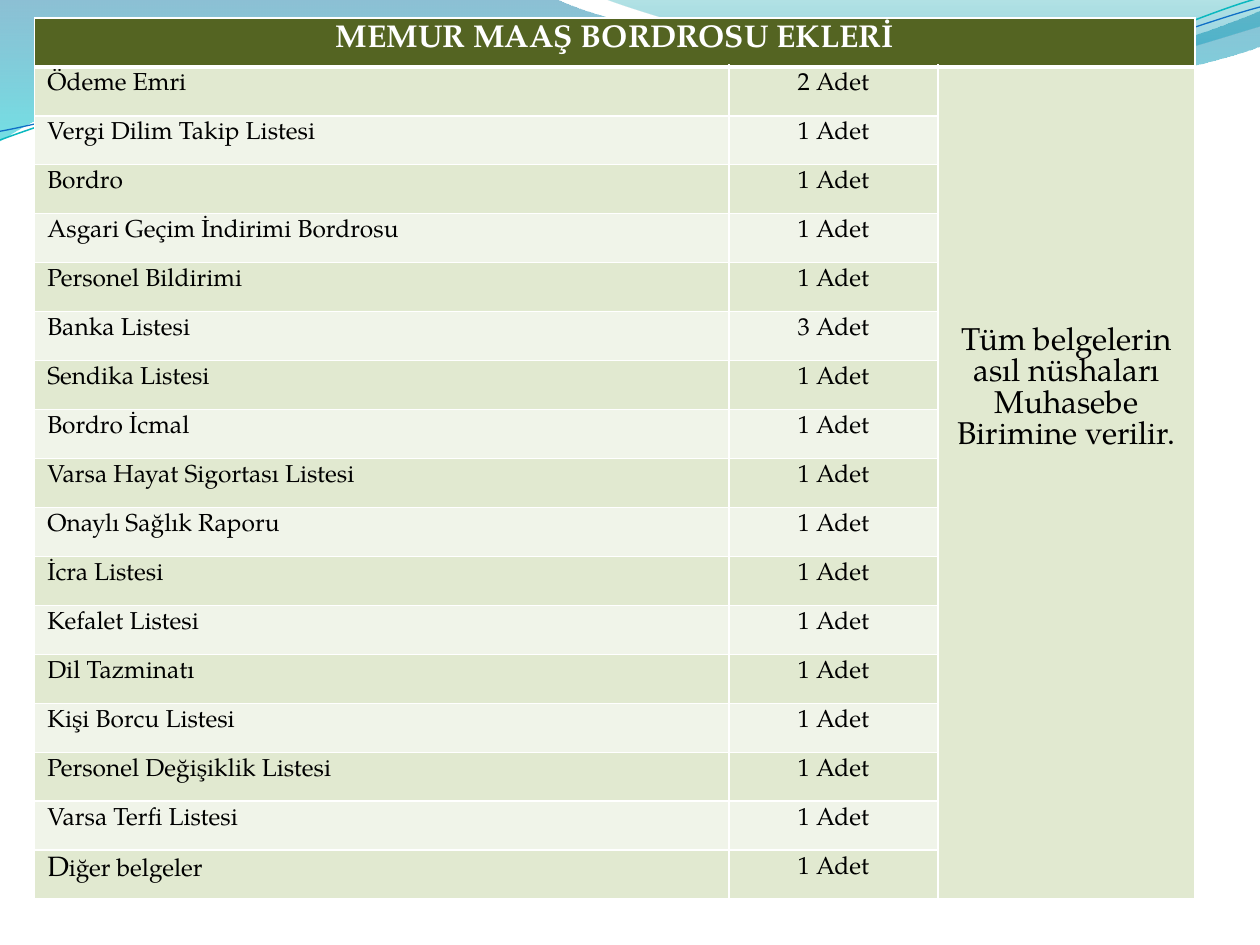
import math
from dataclasses import dataclass
from typing import Any, Optional

from lxml import etree
from pptx import Presentation
from pptx import util as u
from pptx.dml import color
from pptx.enum import text
from pptx.oxml import ns

WHITE = color.RGBColor(0xFF, 0xFF, 0xFF)
BLACK = color.RGBColor(0, 0, 0)
OLIVE = color.RGBColor(0x54, 0x64, 0x22)
BAND_DARK = color.RGBColor(0xE1, 0xE9, 0xD0)
BAND_LIGHT = color.RGBColor(0xF0, 0xF4, 0xE9)
DEEP_BLUE = color.RGBColor(0x00, 0x74, 0xA1)
CYAN = color.RGBColor(0x00, 0xC6, 0xCF)
TEAL = color.RGBColor(0x00, 0xA1, 0xA9)
SKY = color.RGBColor(0x00, 0x8B, 0xBF)
AQUA = color.RGBColor(0x0A, 0xB8, 0xBF)
BLUE = color.RGBColor(0x0F, 0x6F, 0xC6)

FONT = "TeX Gyre Pagella"
ROW_HEIGHT = 28
COLUMN_WIDTHS = (396.7, 119.5, 146.9)
TITLE = "MEMUR MAAŞ BORDROSU EKLERİ"
NOTE = "Tüm belgelerin asıl nüshaları Muhasebe Birimine verilir."
DOCUMENTS = (
    ("Ödeme Emri", 2), ("Vergi Dilim Takip Listesi", 1), ("Bordro", 1),
    ("Asgari Geçim İndirimi Bordrosu", 1), ("Personel Bildirimi", 1),
    ("Banka Listesi", 3), ("Sendika Listesi", 1), ("Bordro İcmal", 1),
    ("Varsa Hayat Sigortası Listesi", 1), ("Onaylı Sağlık Raporu", 1),
    ("İcra Listesi", 1), ("Kefalet Listesi", 1), ("Dil Tazminatı", 1),
    ("Kişi Borcu Listesi", 1), ("Personel Değişiklik Listesi", 1),
    ("Varsa Terfi Listesi", 1), ("Diğer belgeler", 1),
)

Point = tuple[float, float]


@dataclass(frozen=True)
class Stop:
    position: float
    tint: color.RGBColor
    opacity: int


@dataclass(frozen=True)
class Wave:
    start: Point
    segments: tuple[tuple[Point, ...], ...]
    stops: tuple[Stop, ...] = ()
    stroke: Optional[color.RGBColor] = None
    weight: float = 0
    pivot: Point = (0, 0)
    turn: float = 0


@dataclass(frozen=True)
class Style:
    size: float
    ink: color.RGBColor = BLACK
    bold: bool = False
    align: text.PP_ALIGN = text.PP_ALIGN.CENTER


HEADING = Style(18, WHITE, True)
ITEM = Style(14, align=text.PP_ALIGN.LEFT)
COUNT = Style(14)
REMARK = Style(18)

WAVES = (
    Wave((0, 0), (
        ((317, -1),),
        ((343, 12), (478, 45), (546, 45)),
        ((614, 45), (690, 19), (720, 6)),
        ((721, 26),),
        ((708, 32), (626, 55), (537, 54)),
        ((448, 54), (275, 20), (185, 24)),
        ((93, 26), (33, 60), (-1, 81)),
        ((0, 0),),
    ), (Stop(0, DEEP_BLUE, 45), Stop(1, CYAN, 55))),
    Wave((345, -1), (
        ((367, 8), (491, 45), (554, 47)),
        ((616, 50), (692, 23), (720, 15)),
        ((720, 0),),
        ((345, -1),),
    ), (Stop(0, TEAL, 30), Stop(0.8, SKY, 45))),
    Wave((0, 80), (
        ((35, 67), (114, 41), (199, 37)),
        ((284, 34), (427, 64), (513, 58)),
        ((600, 51), (675, 11), (719, -1)),
    ), stroke=AQUA, weight=0.85, pivot=(359.3, 41.4), turn=-2.7),
    Wave((0, 75), (
        ((34, 69), (118, 44), (204, 40)),
        ((290, 37), (430, 60), (516, 54)),
        ((602, 48), (678, 15), (720, 4)),
    ), stroke=BLUE, weight=0.75, pivot=(359.6, 42.5), turn=-2.7),
)


def apply(target: Any, values: dict[str, Any]) -> None:
    for name, value in values.items():
        setattr(target, name, value)


def outline(wave: Wave) -> list[Point]:
    points = [wave.start, *(point for segment in wave.segments for point in segment)]
    cx, cy = wave.pivot
    cos, sin = math.cos(math.radians(-wave.turn)), math.sin(math.radians(-wave.turn))
    return [(cx + (x - cx) * cos - (y - cy) * sin,
             cy + (x - cx) * sin + (y - cy) * cos) for x, y in points]


def bend_segments(shape: Any, wave: Wave) -> None:
    lines = iter(list(shape._element.iter(ns.qn("a:lnTo"))))
    for segment in wave.segments:
        group = [next(lines) for _ in segment]
        if len(group) == 3:
            curve = etree.Element(ns.qn("a:cubicBezTo"))
            group[0].addprevious(curve)
            for line in group:
                curve.append(line[0])
                line.getparent().remove(line)


def draw_wave(page: Any, wave: Wave) -> None:
    points = [(u.Pt(x), u.Pt(y)) for x, y in outline(wave)]
    builder = page.shapes.build_freeform(*points[0], scale=1.0)
    builder.add_line_segments(points[1:], close=bool(wave.stops))
    shape = builder.convert_to_shape()
    bend_segments(shape, wave)
    shape.shadow.inherit = False
    shape.rotation = wave.turn
    if not wave.stops:
        shape.fill.background()
        shape.line.color.rgb = wave.stroke
        shape.line.width = u.Pt(wave.weight)
        return
    shape.line.fill.background()
    shape.fill.gradient()
    shape.fill.gradient_angle = 270
    for target, stop in zip(shape.fill.gradient_stops, wave.stops):
        target.position = stop.position
        target.color.rgb = stop.tint
    tints = shape.fill._xPr.iter(ns.qn("a:srgbClr"))
    for tint, stop in zip(tints, wave.stops):
        etree.SubElement(tint, ns.qn("a:alpha"), val=str(stop.opacity * 1000))


def paint_cell(cell: Any, fill: color.RGBColor, bottom: float = 1) -> None:
    cell.fill.solid()
    cell.fill.fore_color.rgb = fill
    properties = cell._tc.get_or_add_tcPr()
    for index, (side, weight) in enumerate(zip("LRTB", (1, 1, 1, bottom))):
        border = etree.Element(ns.qn(f"a:ln{side}"), w=str(u.Pt(weight)))
        solid = etree.SubElement(border, ns.qn("a:solidFill"))
        etree.SubElement(solid, ns.qn("a:srgbClr"), val=str(WHITE))
        properties.insert(index, border)


def write_cell(cell: Any, parts: list[tuple[str, float]], style: Style) -> None:
    para = cell.text_frame.paragraphs[0]
    tallest = max(size for _, size in parts)
    apply(para, {"alignment": style.align, "line_spacing": u.Pt(tallest)})
    for words, size in parts:
        span = para.add_run()
        span.text = words
        apply(span.font, {"name": FONT, "size": u.Pt(size), "bold": style.bold})
        span.font.color.rgb = style.ink


def draw_table(page: Any) -> None:
    rows = len(DOCUMENTS) + 1
    frame = page.shapes.add_table(rows, len(COLUMN_WIDTHS), u.Pt(19.8), u.Pt(10.2),
                                  u.Pt(sum(COLUMN_WIDTHS)), u.Pt(rows * ROW_HEIGHT))
    table = frame.table
    for column, width in zip(table.columns, COLUMN_WIDTHS):
        column.width = u.Pt(width)
    for index, row in enumerate(table.rows):
        row.height = u.Pt(ROW_HEIGHT)
        band = BAND_DARK if index % 2 else BAND_LIGHT
        for cell in row.cells:
            paint_cell(cell, band if index else OLIVE, 1 if index else 3)
    table.cell(0, 0).merge(table.cell(0, 2))
    table.cell(1, 2).merge(table.cell(rows - 1, 2))
    write_cell(table.cell(0, 0), [(TITLE, HEADING.size)], HEADING)
    for index, (name, count) in enumerate(DOCUMENTS, start=1):
        parts = [(name, ITEM.size)]
        if index == len(DOCUMENTS):
            parts = [(name[0], 16), (name[1:], ITEM.size)]
        write_cell(table.cell(index, 0), parts, ITEM)
        write_cell(table.cell(index, 1), [(f"{count} Adet", COUNT.size)], COUNT)
    table.cell(1, 2).margin_top = u.Pt(149)
    write_cell(table.cell(1, 2), [(NOTE, REMARK.size)], REMARK)


def main() -> None:
    deck = Presentation()
    apply(deck, {"slide_width": u.Pt(720), "slide_height": u.Pt(540)})
    page = deck.slides.add_slide(deck.slide_layouts[6])
    for wave in WAVES:
        draw_wave(page, wave)
    draw_table(page)
    deck.save("out.pptx")


if __name__ == "__main__":
    main()
